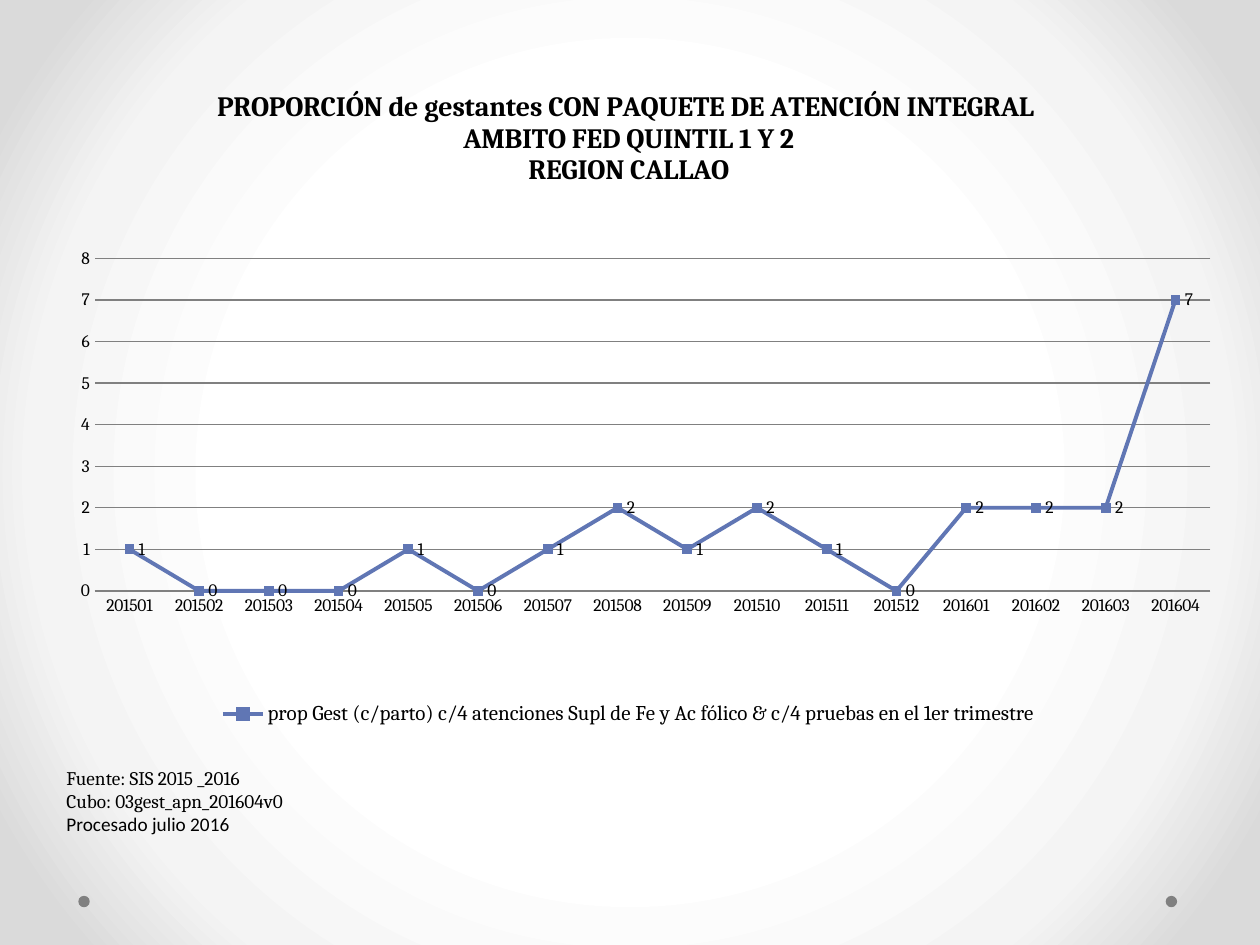
from pptx import Presentation
from pptx.chart.data import CategoryChartData
from pptx.dml.color import RGBColor
from pptx.enum.chart import XL_CHART_TYPE, XL_LABEL_POSITION, XL_LEGEND_POSITION, XL_MARKER_STYLE, XL_TICK_MARK
from pptx.enum.shapes import MSO_SHAPE
from pptx.oxml import parse_xml
from pptx.oxml.ns import nsdecls
from pptx.util import Cm, Pt

LINE_MARKERS = XL_CHART_TYPE.LINE_MARKERS
LABEL_RIGHT = XL_LABEL_POSITION.RIGHT
LEGEND_BOTTOM = XL_LEGEND_POSITION.BOTTOM
SQUARE = XL_MARKER_STYLE.SQUARE
NO_TICK = XL_TICK_MARK.NONE
OVAL = MSO_SHAPE.OVAL

BLACK = RGBColor(0x00, 0x00, 0x00)
GREY = RGBColor(0x80, 0x80, 0x80)
BLUE = RGBColor(0x60, 0x76, 0xB4)
GLOW = {50: RGBColor(0xFF, 0xFF, 0xFF), 76: RGBColor(0xF4, 0xF4, 0xF4), 92: RGBColor(0xDA, 0xDA, 0xDA)}

TITLE_LINES = [
    "PROPORCIÓN de gestantes CON PAQUETE DE ATENCIÓN INTEGRAL ",
    "AMBITO FED QUINTIL 1 Y 2",
    "REGION CALLAO",
]
SERIES_NAME = "prop Gest (c/parto) c/4 atenciones Supl de Fe y Ac fólico & c/4 pruebas en el 1er trimestre"
MONTHS = [f"2015{month:02d}" for month in range(1, 13)] + [f"2016{month:02d}" for month in range(1, 5)]
PROPORTIONS = [1, 0, 0, 0, 1, 0, 1, 2, 1, 2, 1, 0, 2, 2, 2, 7]
SOURCE_LINES = [
    ("Fuente: SIS 2015 _2016", "Cambria"),
    ("Cubo: 03gest_apn_201604v0", "Cambria"),
    ("Procesado julio 2016", "Calibri"),
]
PLOT_AREA = {"x": 0.05, "y": 0.29, "w": 0.94, "h": 0.5}


def format_font(font, size, name="Cambria", bold=False):
    values = {"size": Pt(size), "name": name, "bold": bold}
    for attribute, value in values.items():
        setattr(font, attribute, value)
    font.color.rgb = BLACK


deck = Presentation()
deck.slide_width = Cm(25.4)
deck.slide_height = Cm(19.05)
page = deck.slides.add_slide(deck.slide_layouts[6])

stops = "".join(
    f'<a:gs pos="{position * 1000}"><a:srgbClr val="{color}"/></a:gs>'
    for position, color in GLOW.items()
)
background = parse_xml(
    f'<p:bg {nsdecls("p", "a")}><p:bgPr><a:gradFill rotWithShape="1"><a:gsLst>{stops}</a:gsLst>'
    '<a:path path="circle"><a:fillToRect l="50000" t="50000" r="50000" b="50000"/></a:path>'
    '</a:gradFill><a:effectLst/></p:bgPr></p:bg>'
)
page.element.cSld.insert(0, background)

for left in (23.5, 1.58):
    dot = page.shapes.add_shape(OVAL, Cm(left), Cm(18.06), Cm(0.23), Cm(0.23))
    dot.shadow.inherit = False
    dot.fill.solid()
    dot.fill.fore_color.rgb = GREY
    dot.line.fill.background()

data = CategoryChartData(number_format="0")
data.categories = MONTHS
data.add_series(SERIES_NAME, PROPORTIONS)
chart = page.shapes.add_chart(
    LINE_MARKERS, Cm(0.71), Cm(1.32), Cm(23.93), Cm(13.41), data
).chart
format_font(chart.font, 10)

chart.has_title = True
title = chart.chart_title
title.include_in_layout = False
for index, line in enumerate(TITLE_LINES):
    frame = title.text_frame
    para = frame.add_paragraph() if index else frame.paragraphs[0]
    span = para.add_run()
    span.text = line
    format_font(span.font, 16, bold=True)

chart.has_legend = True
chart.legend.position = LEGEND_BOTTOM
chart.legend.include_in_layout = False
format_font(chart.legend.font, 12)

for axis in (chart.category_axis, chart.value_axis):
    axis.major_tick_mark = NO_TICK
    axis.minor_tick_mark = NO_TICK
chart.category_axis.format.line.color.rgb = GREY
value_axis = chart.value_axis
value_axis.minimum_scale = 0
value_axis.maximum_scale = 8
value_axis.major_unit = 1
value_axis.format.line.fill.background()
value_axis.tick_labels.number_format = "0"
value_axis.tick_labels.number_format_is_linked = False
gridline = value_axis.major_gridlines.format.line
gridline.color.rgb = GREY
gridline.width = Pt(0.75)

plot = chart.plots[0]
plot.vary_by_categories = False
series = plot.series[0]
series.smooth = False
series.format.line.color.rgb = BLUE
series.format.line.width = Pt(2.25)
marker = series.marker
marker.style = SQUARE
marker.size = 5
marker.format.fill.solid()
marker.format.fill.fore_color.rgb = BLUE
marker.format.line.color.rgb = BLUE
labels = series.data_labels
labels.show_value = True
labels.position = LABEL_RIGHT
format_font(labels.font, 10)

sizes = "".join(f'<c:{side} val="{share}"/>' for side, share in PLOT_AREA.items())
layout = parse_xml(
    f'<c:layout {nsdecls("c")}><c:manualLayout><c:layoutTarget val="inner"/>'
    f'<c:xMode val="edge"/><c:yMode val="edge"/>{sizes}</c:manualLayout></c:layout>'
)
plot_area = chart.element.chart.plotArea
for old_layout in plot_area.findall(layout.tag):
    plot_area.remove(old_layout)
plot_area.insert(0, layout)

box = page.shapes.add_textbox(Cm(1.09), Cm(15.32), Cm(8.2), Cm(1.68))
frame = box.text_frame
frame.word_wrap = True
for index, (line, font_name) in enumerate(SOURCE_LINES):
    para = frame.add_paragraph() if index else frame.paragraphs[0]
    span = para.add_run()
    span.text = line
    format_font(span.font, 11, font_name)

deck.save("out.pptx")
